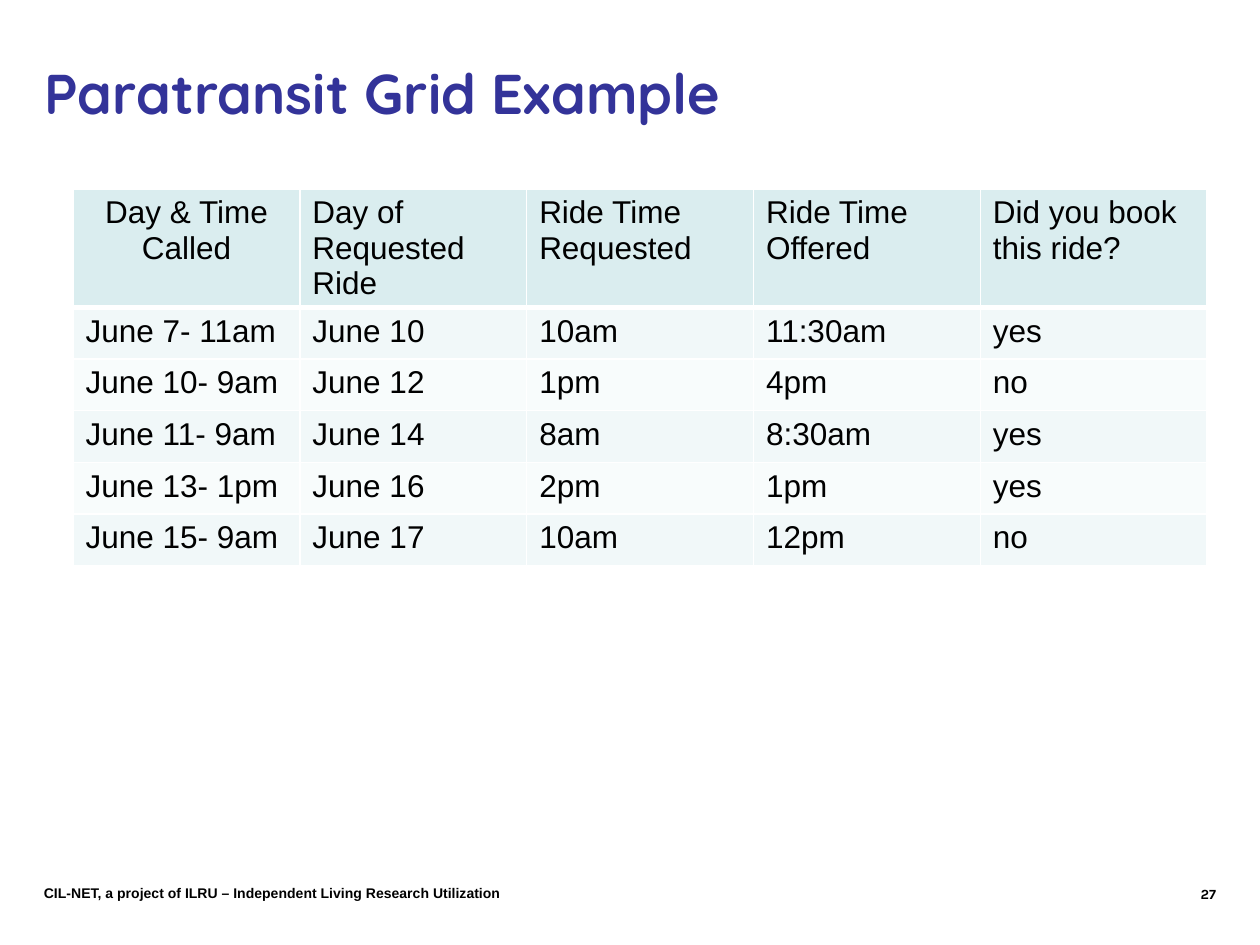
from lxml import etree
from pptx import Presentation
from pptx.dml.color import RGBColor
from pptx.enum.text import MSO_ANCHOR, PP_ALIGN
from pptx.oxml.ns import qn
from pptx.util import Inches, Pt

LEFT, CENTER, RIGHT = PP_ALIGN.LEFT, PP_ALIGN.CENTER, PP_ALIGN.RIGHT
TOP, MIDDLE = MSO_ANCHOR.TOP, MSO_ANCHOR.MIDDLE

# Content
TITLE = "Paratransit Grid Example"
FOOTER = "CIL-NET, a project of ILRU – Independent Living Research Utilization"
NUMBER = "27"
RIDES = [
    ("Day & Time Called", "Day of Requested Ride", "Ride Time Requested",
     "Ride Time Offered", "Did you book this ride?"),
    ("June 7- 11am", "June 10", "10am", "11:30am", "yes"),
    ("June 10- 9am", "June 12", "1pm", "4pm", "no"),
    ("June 11- 9am", "June 14", "8am", "8:30am", "yes"),
    ("June 13- 1pm", "June 16", "2pm", "1pm", "yes"),
    ("June 15- 9am", "June 17", "10am", "12pm", "no"),
]
HEAD, ODD, EVEN, RULE = "DAEDEF", "F1F8F9", "F8FCFC", "FFFFFF"
COL_W, ROW_H = 1.8, 0.41


def color(code):
    return RGBColor.from_string(code)


def write(frame, text, size=18, font="Arial", ink="000000", bold=False,
          align=LEFT):
    frame.word_wrap = True
    para = frame.paragraphs[0]
    para.alignment = align
    run = para.add_run()
    run.text = text
    run.font.size = Pt(size)
    run.font.name = font
    run.font.bold = bold
    run.font.color.rgb = color(ink)


def place(shape, left, top, width, height):
    shape.left, shape.top = Inches(left), Inches(top)
    shape.width, shape.height = Inches(width), Inches(height)


def add_text(box, text, **style):
    shape = slide.shapes.add_textbox(*(Inches(n) for n in box))
    write(shape.text_frame, text, **style)


def edge(cell, side, points):
    props = cell._tc.get_or_add_tcPr()
    line = etree.SubElement(props, qn("a:ln" + side), w=str(Pt(points)))
    fill = etree.SubElement(line, qn("a:solidFill"))
    etree.SubElement(fill, qn("a:srgbClr"), val=RULE)


prs = Presentation()
prs.slide_width, prs.slide_height = Inches(10), Inches(7.5)
slide = prs.slides.add_slide(prs.slide_layouts[5])

# Title
title = slide.shapes.title
place(title, 0.25, 0.3, 9.25, 0.87)
title.text_frame.vertical_anchor = MIDDLE
write(title.text_frame, TITLE, size=32, font="Quicksand", ink="333399",
      bold=True)

# Ride table
rows, cols = len(RIDES), len(RIDES[0])
grid = slide.shapes.add_table(rows, cols, Inches(0.58), Inches(1.5),
                              Inches(cols * COL_W), Inches(rows * ROW_H)).table
for r, ride in enumerate(RIDES):
    for c, text in enumerate(ride):
        cell = grid.cell(r, c)
        # The rule under the header is heavier than the others
        for side in "LRTB":
            heavy = (r, side) in ((0, "B"), (1, "T"))
            edge(cell, side, 3 if heavy else 1)
        cell.fill.solid()
        cell.fill.fore_color.rgb = color(
            HEAD if r == 0 else ODD if r % 2 else EVEN)
        cell.vertical_anchor = TOP
        write(cell.text_frame, text, align=CENTER if r == c == 0 else LEFT)

# Footer
add_text((0.25, 6.97, 5, 0.23), FOOTER, size=8, bold=True)
add_text((7.17, 6.98, 2.58, 0.27), NUMBER, size=8, font="Karla", bold=True,
         align=RIGHT)

prs.save("out.pptx")
